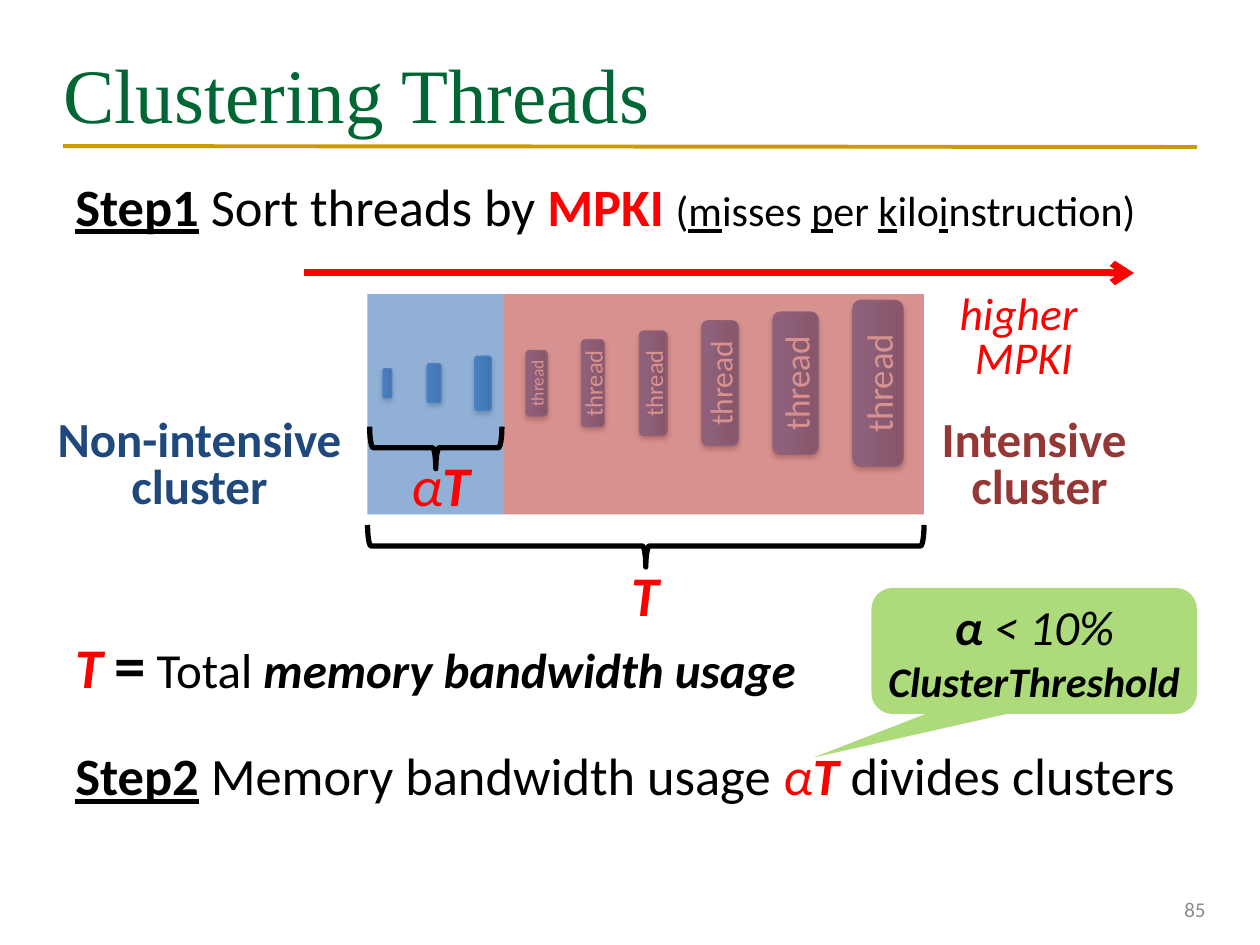
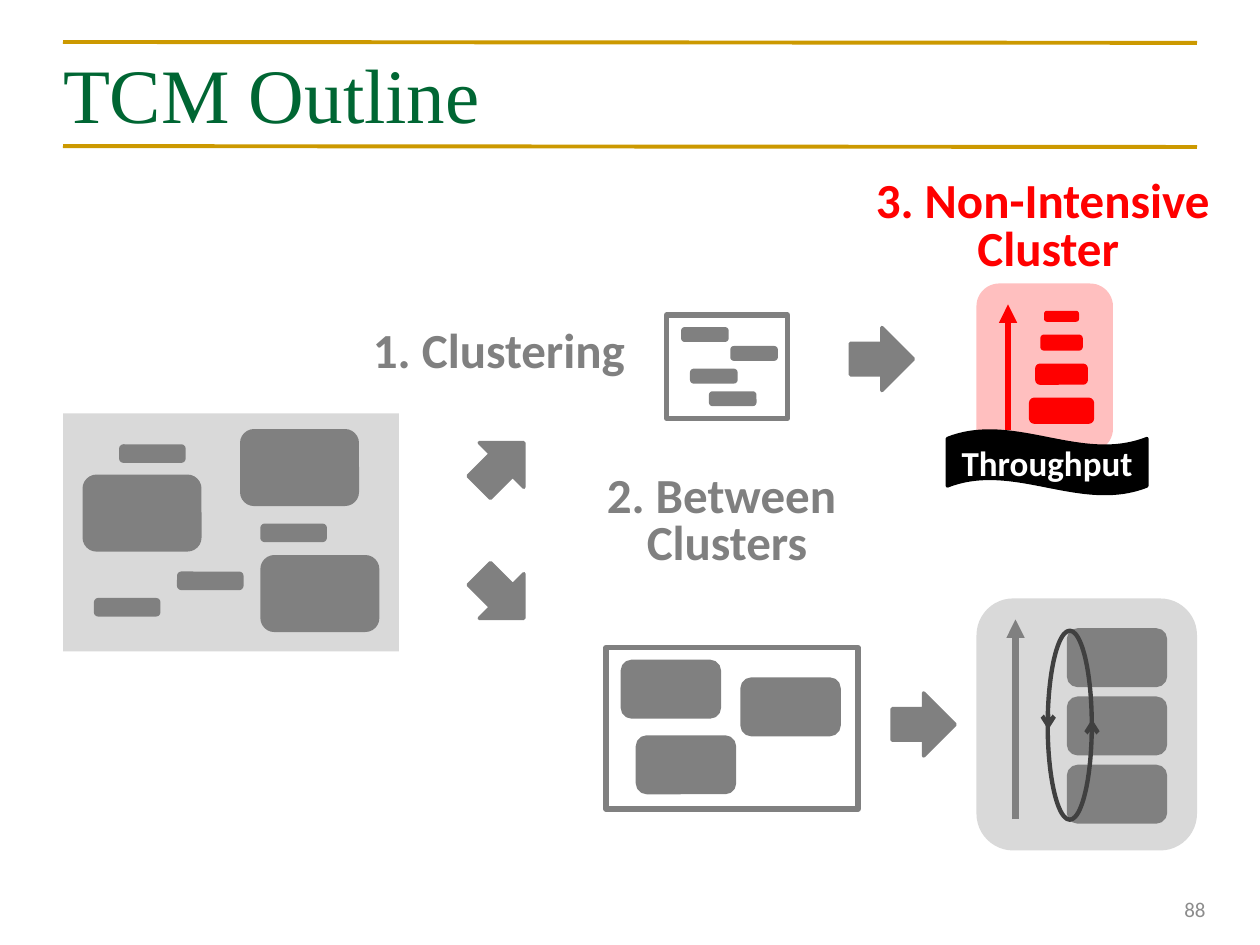
"""Build two slides about clustering threads by memory intensity."""
from dataclasses import dataclass
from typing import Any, NamedTuple

from lxml.etree import SubElement
from pptx import Presentation
from pptx.dml.color import RGBColor
from pptx.enum.shapes import MSO_CONNECTOR as Link, MSO_SHAPE as Form
from pptx.enum.text import MSO_ANCHOR as Anchor, MSO_AUTO_SIZE as Fit, PP_ALIGN as Align
from pptx.oxml.ns import qn
from pptx.util import Pt


@dataclass(frozen=True)
class Theme:
    """Colours, fonts and type sizes of the deck."""
    title_font: str = "Times New Roman"
    body_font: str = "Calibri"
    title: str = "006633"
    rule: str = "CC9900"
    ink: str = "000000"
    paper: str = "FFFFFF"
    accent: str = "FF0000"
    muted: str = "808080"
    pale: str = "D9D9D9"
    cycle: str = "404040"
    number: str = "8C8C8C"
    calm: str = "4F81BD"
    calm_text: str = "1F497D"
    intense: str = "C0504D"
    intense_text: str = "953735"
    callout: str = "92D050"
    bar_edge: str = "4B7EBC"
    bar_stops: tuple[str, str] = ("2F5F99", "3D7CC7")
    title_size: float = 44
    step_size: float = 30
    symbol_size: float = 32
    equals_size: float = 36
    label_size: float = 28
    axis_size: float = 26
    note_size: float = 24
    banner_size: float = 20
    number_size: float = 12


THEME = Theme()


class Box(NamedTuple):
    """Left, top, width and height in points."""
    left: float
    top: float
    width: float
    height: float


class Style(NamedTuple):
    """Fill, opacity in percent, outline and rotation of a shape."""
    fill: str | None = None
    opacity: int = 100
    line: str | None = None
    weight: float = 2
    turn: float = 0


class ThreadBar(NamedTuple):
    """Centre, length, thickness and label size of a thread bar."""
    centre: float
    length: float
    thickness: float
    size: float = 0


@dataclass(frozen=True)
class Span:
    """A stretch of text in one format."""
    text: str
    size: float
    color: str = THEME.ink
    bold: bool = False
    italic: bool = False
    underline: bool = False
    font: str = THEME.body_font


@dataclass(frozen=True)
class Para:
    """A paragraph with its spacing in points."""
    spans: tuple[Span, ...]
    align: Align = Align.CENTER
    spacing: float = 1.0
    before: float = 0


MUTED_BAR = Style(THEME.muted, line=THEME.muted)
ACCENT_BAR = Style(THEME.accent, line=THEME.accent)
MUTED_FRAME = Style(line=THEME.muted, weight=3)

THREADS = (
    ThreadBar(221.4, 16.6, 5), ThreadBar(248, 22.3, 7.9), ThreadBar(276.1, 31, 9.4),
    ThreadBar(306.7, 37.4, 12.2, 10), ThreadBar(338.8, 49.7, 13, 14),
    ThreadBar(373.3, 59.8, 15.8, 14), ThreadBar(411.5, 71.3, 20.9, 18),
    ThreadBar(454.7, 81.4, 25.9, 20), ThreadBar(501.8, 95, 28.8, 21),
)
THREAD_AXIS = 219


def apply(target: Any, values: dict[str, Any]) -> None:
    """Set each named attribute on the target."""
    for name, value in values.items():
        setattr(target, name, value)


def write(shape: Any, paras: tuple[Para, ...], side: float = 0, edge: float = 3.6,
          anchor: Anchor = Anchor.MIDDLE, wrap: bool = True) -> None:
    """Fill the text frame of a shape with formatted paragraphs."""
    frame = shape.text_frame
    apply(frame, {"auto_size": Fit.NONE, "word_wrap": wrap, "vertical_anchor": anchor,
                  "margin_left": Pt(side), "margin_right": Pt(side),
                  "margin_top": Pt(edge), "margin_bottom": Pt(edge)})
    for index, para in enumerate(paras):
        target = frame.add_paragraph() if index else frame.paragraphs[0]
        apply(target, {"alignment": para.align, "line_spacing": para.spacing,
                       "space_before": Pt(para.before)})
        for span in para.spans:
            run = target.add_run()
            run.text = span.text
            apply(run.font, {"name": span.font, "size": Pt(span.size), "bold": span.bold,
                             "italic": span.italic, "underline": span.underline})
            run.font.color.rgb = RGBColor.from_string(span.color)


def add_text(canvas: Any, box: Box, *paras: Para, **frame: Any) -> None:
    """Add a text box."""
    write(canvas.add_textbox(*map(Pt, box)), paras, **frame)


def add_label(canvas: Any, box: Box, lines: tuple[str, ...], color: str,
              size: float = THEME.label_size, bold: bool = True, **frame: Any) -> None:
    """Add a centred label with tight lines."""
    add_text(canvas, box, *(Para((Span(line, size, color, bold, not bold),), spacing=0.8)
                            for line in lines), **frame)


def add_form(canvas: Any, form: Form, box: Box, style: Style) -> Any:
    """Add a preset shape without a theme shadow."""
    shape = canvas.add_shape(form, *map(Pt, box))
    shape.shadow.inherit = False
    shape.rotation = style.turn
    if style.fill:
        shape.fill.solid()
        shape.fill.fore_color.rgb = RGBColor.from_string(style.fill)
        if style.opacity < 100:
            color = shape.element.spPr.find(qn("a:solidFill"))[0]
            SubElement(color, qn("a:alpha"), val=str(style.opacity * 1000))
    else:
        shape.fill.background()
    if style.line:
        shape.line.color.rgb = RGBColor.from_string(style.line)
        shape.line.width = Pt(style.weight)
    else:
        shape.line.fill.background()
    return shape


def add_bars(canvas: Any, width: float, height: float,
             corners: tuple[tuple[float, float], ...]) -> None:
    """Add equal muted bars at the given corners."""
    for left, top in corners:
        add_form(canvas, Form.ROUNDED_RECTANGLE, Box(left, top, width, height), MUTED_BAR)


def add_line(canvas: Any, start: tuple[float, float], end: tuple[float, float],
             color: str, weight: float, head: str | None = None) -> None:
    """Add a straight line with an optional arrowhead at its end."""
    line = canvas.add_connector(Link.STRAIGHT, *map(Pt, start + end))
    line.line.color.rgb = RGBColor.from_string(color)
    line.line.width = Pt(weight)
    properties = line.element.spPr
    if head:
        SubElement(properties.find(qn("a:ln")), qn("a:tailEnd"), type=head)
    SubElement(properties, qn("a:effectLst"))


def add_rule(canvas: Any, top: float) -> None:
    """Add a golden rule across the page."""
    add_line(canvas, (36, top), (684, top + 0.5), THEME.rule, 2.25)


def add_page(deck: Any, title: str, number: str) -> Any:
    """Add a page with its title, rule and number and return its shapes."""
    page = deck.slides.add_slide(deck.slide_layouts[5])
    heading = page.shapes.title
    apply(heading, dict(zip(("left", "top", "width", "height"), map(Pt, (36, 21.6, 648, 62.6)))))
    write(heading, (Para((Span(title, THEME.title_size, THEME.title, font=THEME.title_font),),
                         Align.LEFT),))
    add_rule(page.shapes, 83.5)
    add_text(page.shapes, Box(528, 505.4, 168, 28.8),
             Para((Span(number, THEME.number_size, THEME.number),), Align.RIGHT), side=7.2)
    return page.shapes


def add_thread(canvas: Any, bar: ThreadBar) -> None:
    """Add an upright thread bar with a gradient and a soft shadow."""
    box = Box(bar.centre - bar.length / 2, THREAD_AXIS - bar.thickness / 2,
              bar.length, bar.thickness)
    shape = add_form(canvas, Form.ROUNDED_RECTANGLE, box,
                     Style(line=THEME.bar_edge, weight=0.75, turn=270))
    shape.fill.gradient()
    shape.fill.gradient_angle = 90
    for stop, color, position in zip(shape.fill.gradient_stops, THEME.bar_stops, (0, 0.8)):
        stop.position = position
        stop.color.rgb = RGBColor.from_string(color)
    shadow = SubElement(shape.element.spPr.find(qn("a:effectLst")), qn("a:outerShdw"),
                        blurRad=str(Pt(3.1)), dist=str(Pt(1.8)), dir="5400000", rotWithShape="0")
    color = SubElement(shadow, qn("a:srgbClr"), val=THEME.ink)
    SubElement(color, qn("a:alpha"), val="35000")
    if bar.size:
        write(shape, (Para((Span("thread", bar.size, THEME.paper),)),))


def build_clustering(deck: Any) -> None:
    """Build the page on sorting and splitting threads."""
    canvas = add_page(deck, "Clustering Threads", "85")
    step, note, label, symbol = (THEME.step_size, THEME.note_size,
                                 THEME.label_size, THEME.symbol_size)
    red = THEME.accent
    initials = (("m", "isses "), ("p", "er "), ("k", "ilo"), ("i", "nstruction)"))
    expansion = tuple(span for first, rest in initials
                      for span in (Span(first, note, underline=True), Span(rest, note)))
    add_text(canvas, Box(36, 96, 648, 48), Para((
        Span("Step1", step, bold=True, underline=True), Span(" Sort threads by ", step),
        Span("MPKI ", step, red, bold=True), Span("(", note), *expansion), Align.LEFT),
        side=7.2, anchor=Anchor.TOP)
    bars = canvas.add_group_shape().shapes
    for bar in THREADS:
        add_thread(bars, bar)
    add_line(canvas, (174, 156), (648, 156), red, 4, "arrow")
    add_label(canvas, Box(540, 165, 90, 58), ("higher ", "MPKI"), red, THEME.axis_size, False)
    brace = Style(line=THEME.ink, weight=3, turn=90)
    add_form(canvas, Form.RIGHT_BRACE, Box(357, 153, 24, 318), brace)
    total = Span("T", symbol, red, bold=True, italic=True)
    add_text(canvas, Box(351, 324, 36, 39.6), Para((total,), spacing=0.8), anchor=Anchor.TOP)
    callout = add_form(canvas, Form.ROUNDED_RECTANGULAR_CALLOUT, Box(498, 336, 186, 72),
                       Style(THEME.callout, 75))
    for index, value in enumerate((-0.678, 0.846, 0.167)):
        callout.adjustments[index] = value
    write(callout, (Para((Span("α", label, bold=True, italic=True),
                          Span(" < 10% ", label, italic=True),
                          Span("ClusterThreshold", note, bold=True, italic=True))),))
    add_form(canvas, Form.RECTANGLE, Box(210, 168, 78, 126), Style(THEME.calm, 62))
    add_form(canvas, Form.RECTANGLE, Box(288, 168, 240, 126), Style(THEME.intense, 62))
    add_label(canvas, Box(528, 240, 132, 55.4), ("Intensive ", "cluster"),
              THEME.intense_text, edge=0, anchor=Anchor.TOP)
    add_form(canvas, Form.RIGHT_BRACE, Box(237, 218, 24, 75.6), brace)
    add_text(canvas, Box(228, 261.4, 48, 39.6),
             Para((Span("α", symbol, red, italic=True), total), spacing=0.8), anchor=Anchor.TOP)
    add_label(canvas, Box(24, 240, 180, 55.4), ("Non-intensive", "cluster"),
              THEME.calm_text, edge=0, anchor=Anchor.TOP)
    add_text(canvas, Box(36, 354, 648, 132), Para((
        total, Span(" ", label, italic=True), Span("=", THEME.equals_size, bold=True),
        Span(" Total ", label),
        Span("memory bandwidth usage", label, bold=True, italic=True)), Align.LEFT),
        Para((Span("Step2", step, bold=True, underline=True),
              Span(" Memory bandwidth usage ", step), Span("α", step, red, italic=True),
              Span("T ", step, red, bold=True, italic=True), Span("divides clusters", step)),
             Align.LEFT, before=24), side=7.2, anchor=Anchor.TOP)


def build_outline(deck: Any) -> None:
    """Build the page that outlines the scheduling steps."""
    canvas = add_page(deck, "TCM Outline", "88")
    add_form(canvas, Form.ROUNDED_RECTANGLE, Box(558, 342, 126, 144), Style(THEME.pale))
    add_form(canvas, Form.RECTANGLE, Box(36, 236.2, 192, 136), Style(THEME.pale))
    add_bars(canvas, 36, 8.6, ((102.2, 327.6), (69.1, 254.9), (149.8, 300.2), (54.7, 342.7)))
    add_bars(canvas, 66, 42, ((149.8, 318.2), (48.2, 272.2), (138.2, 246.2)))
    intensive = canvas.add_group_shape().shapes
    add_form(intensive, Form.RECTANGLE, Box(346.3, 370.1, 144, 92.2), MUTED_FRAME)
    add_bars(intensive, 55.4, 31.7, ((355.7, 378), (424.1, 388.1), (364.3, 421.2)))
    calm = canvas.add_group_shape().shapes
    add_form(calm, Form.RECTANGLE, Box(380.9, 180, 69.1, 59), MUTED_FRAME)
    add_bars(calm, 25.2, 6.5, ((390.2, 187.9), (395.3, 211.7), (418.3, 198.7), (406.1, 224.6)))
    for left, top, turn in ((268.6, 247.7, 315), (268.6, 322.6, 45),
                            (486, 187.2, 0), (509.8, 396, 0)):
        add_form(canvas, Form.RIGHT_ARROW, Box(left, top, 36, 36), MUTED_BAR._replace(turn=turn))
    add_form(canvas, Form.ROUNDED_RECTANGLE, Box(558, 162, 78, 96), Style(THEME.accent, 25))
    for top, width, height in ((178.6, 18, 4.3), (192.2, 22.3, 7.2),
                               (208.8, 28.1, 10.1), (228.2, 35.3, 13)):
        add_form(canvas, Form.ROUNDED_RECTANGLE,
                 Box(606.6 - width / 2, top, width, height), ACCENT_BAR)
    add_line(canvas, (576, 246), (576, 174), THEME.accent, 3.5, "triangle")
    add_bars(canvas, 55.4, 31.7, tuple((610.6, 360 + 39 * row) for row in range(3)))
    add_line(canvas, (580.3, 468), (580.3, 354), THEME.muted, 3.5, "triangle")
    add_form(canvas, Form.OVAL, Box(557.3, 401.8, 108, 25.2),
             Style(line=THEME.cycle, weight=2.5, turn=270))
    add_line(canvas, (599, 411), (599, 417), THEME.cycle, 2.5, "arrow")
    add_line(canvas, (624, 417), (624, 411), THEME.cycle, 2.5, "arrow")
    add_rule(canvas, 24)
    for box, lines, color in (
            (Box(204.5, 185.8, 161.3, 36), ("1. Clustering",), THEME.muted),
            (Box(341.3, 268.6, 148.3, 62.6), ("2. Between ", "Clusters"), THEME.muted),
            (Box(494.6, 100.1, 208.8, 62.6), ("3. Non-Intensive ", "Cluster"), THEME.accent)):
        add_label(canvas, box, lines, color, side=7.2, anchor=Anchor.TOP, wrap=False)
    banner = add_form(canvas, Form.WAVE, Box(541.4, 246.2, 114, 36),
                      Style(THEME.ink, line=THEME.ink))
    write(banner, (Para((Span("Throughput", THEME.banner_size, THEME.paper, True),)),), side=7.2)


def main() -> None:
    """Build and save the deck."""
    deck = Presentation()
    apply(deck, {"slide_width": Pt(720), "slide_height": Pt(540)})
    build_clustering(deck)
    build_outline(deck)
    deck.save("out.pptx")


if __name__ == "__main__":
    main()
